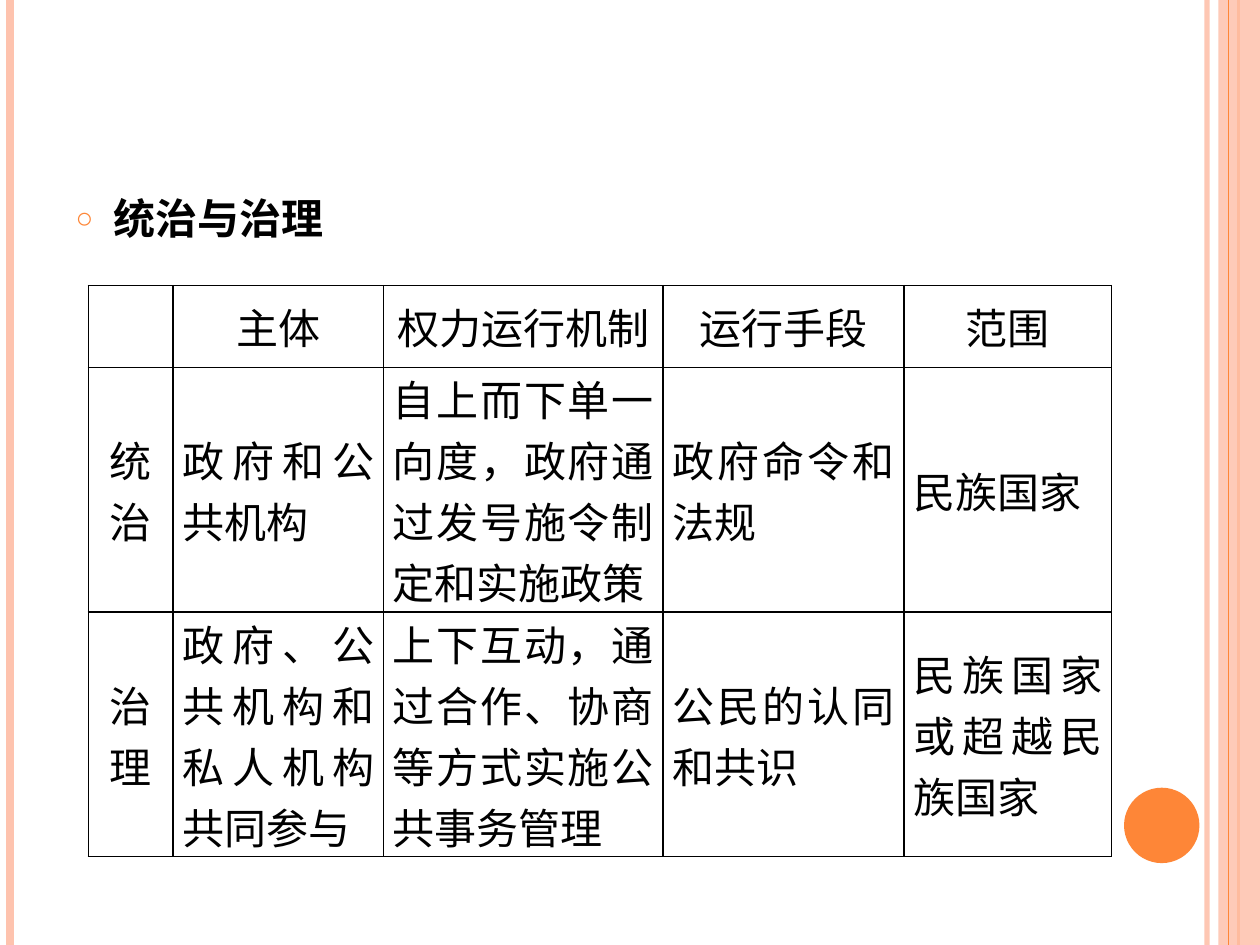
from lxml.etree import SubElement
from pptx import Presentation
from pptx.dml.color import RGBColor
from pptx.enum.shapes import MSO_CONNECTOR as Conn, MSO_SHAPE as Shape
from pptx.enum.text import MSO_ANCHOR as Anchor, MSO_AUTO_SIZE as AutoSize, PP_ALIGN as Align
from pptx.oxml.ns import qn
from pptx.util import Cm, Pt

PEACH, ORANGE, BLACK = "FEC3AE", "FE8637", "000000"
ROWS = [
    ["", "主体", "权力运行机制", "运行手段", "范围"],
    ["统治", "政府和公共机构", "自上而下单一向度，政府通过发号施令制定和实施政策",
     "政府命令和法规", "民族国家"],
    ["治理", "政府、公共机构和私人机构共同参与",
     "上下互动，通过合作、协商等方式实施公共事务管理",
     "公民的认同和共识", "民族国家或超越民族国家"],
]


def rgb(value):
    """Turn a hex string into a colour."""
    return RGBColor.from_string(value)


def set_alpha(sp, percent):
    """Make the first colour of a shape partly transparent."""
    color = next(sp._element.spPr.iter(qn("a:srgbClr")))
    SubElement(color, qn("a:alpha"), val=str(percent * 1000))


def add_run(p, text, font, bold=False):
    """Add a black 24 point run to a paragraph."""
    r = p.add_run()
    r.text = text
    r.font.name, r.font.size, r.font.bold = font, Pt(24), bold
    r.font.color.rgb = rgb(BLACK)


def add_rule(s, x, height, color, width):
    """Draw a vertical rule from the top edge of the slide."""
    line = s.shapes.add_connector(Conn.STRAIGHT, Cm(x), 0, Cm(x), Cm(height))
    line.line.color.rgb, line.line.width = rgb(color), Pt(width)
    SubElement(line._element.spPr, qn("a:effectLst"))
    return line


def add_solid(s, kind, left, top, width, height, color):
    """Add a filled shape without outline or shadow."""
    sp = s.shapes.add_shape(kind, Cm(left), Cm(top), Cm(width), Cm(height))
    sp.fill.solid()
    sp.fill.fore_color.rgb = rgb(color)
    sp.line.fill.background()
    sp.shadow.inherit = False
    return sp


def add_frame(s, width, height):
    """Decorate the left and right edges of the slide."""
    set_alpha(add_rule(s, width - 1.07, height, PEACH, 3), 93)
    add_rule(s, 0.2, height, PEACH, 4.5)
    add_rule(s, width - 0.43, height, ORANGE, 1.5)
    set_alpha(add_solid(s, Shape.RECTANGLE, width - 0.84, 0, 0.84, height, PEACH), 87)
    add_rule(s, width - 0.64, height, ORANGE, 0.75)
    add_solid(s, Shape.OVAL, width - 2.74, height - 3.17, 1.52, 1.52, ORANGE)


def fill_body(sp, left, top, width, height, text):
    """Place the body placeholder and give it one bulleted line."""
    sp.left, sp.top, sp.width, sp.height = Cm(left), Cm(top), Cm(width), Cm(height)
    tf = sp.text_frame
    tf.auto_size = AutoSize.NONE
    p = tf.paragraphs[0]
    p.space_before = Pt(6)
    add_run(p, text, "Cambria", True)
    pPr = p._p.get_or_add_pPr()
    pPr.set("marL", str(Cm(0.76)))
    pPr.set("indent", str(-Cm(0.76)))
    SubElement(SubElement(pPr, qn("a:buClr")), qn("a:srgbClr"), val=ORANGE)
    SubElement(pPr, qn("a:buSzPct"), val="70000")
    SubElement(pPr, qn("a:buChar"), char="○")


def set_borders(cell):
    """Draw a thin black line on every side of a cell."""
    tcPr = cell._tc.get_or_add_tcPr()
    for side in "LRTB":
        ln = SubElement(tcPr, qn(f"a:ln{side}"), w=str(Pt(1)))
        SubElement(SubElement(ln, qn("a:solidFill")), qn("a:srgbClr"), val=BLACK)


def add_comparison(s, left, top, widths, heights):
    """Add the comparison table with centred headers and justified text."""
    table = s.shapes.add_table(len(heights), len(widths), Cm(left), Cm(top),
                               Cm(sum(widths)), Cm(sum(heights))).table
    table.first_row = table.horz_banding = False
    for column, width in zip(table.columns, widths):
        column.width = Cm(width)
    for i, (row, height) in enumerate(zip(ROWS, heights)):
        table.rows[i].height = Cm(height)
        for j, text in enumerate(row):
            cell = table.cell(i, j)
            set_borders(cell)
            cell.fill.background()
            cell.vertical_anchor = Anchor.MIDDLE
            cell.margin_left = cell.margin_right = Cm(0.19)
            cell.margin_top = cell.margin_bottom = 0
            if text:
                p = cell.text_frame.paragraphs[0]
                p.alignment = Align.JUSTIFY if i and j else Align.CENTER
                add_run(p, text, "Calibri")


def main():
    """Build and save the slide."""
    prs = Presentation()
    width, height = 25.4, 19.05
    prs.slide_width, prs.slide_height = Cm(width), Cm(height)
    s = prs.slides.add_slide(prs.slide_layouts[1])
    title = s.shapes.title._element
    title.getparent().remove(title)
    add_frame(s, width, height)
    fill_body(s.placeholders[1], 1.27, 3.76, 22.86, 13.26, "统治与治理")
    add_comparison(s, 1.78, 5.76, [1.71, 4.24, 5.64, 4.85, 4.19], [1.65, 4.93, 4.93])
    prs.save("out.pptx")


if __name__ == "__main__":
    main()
